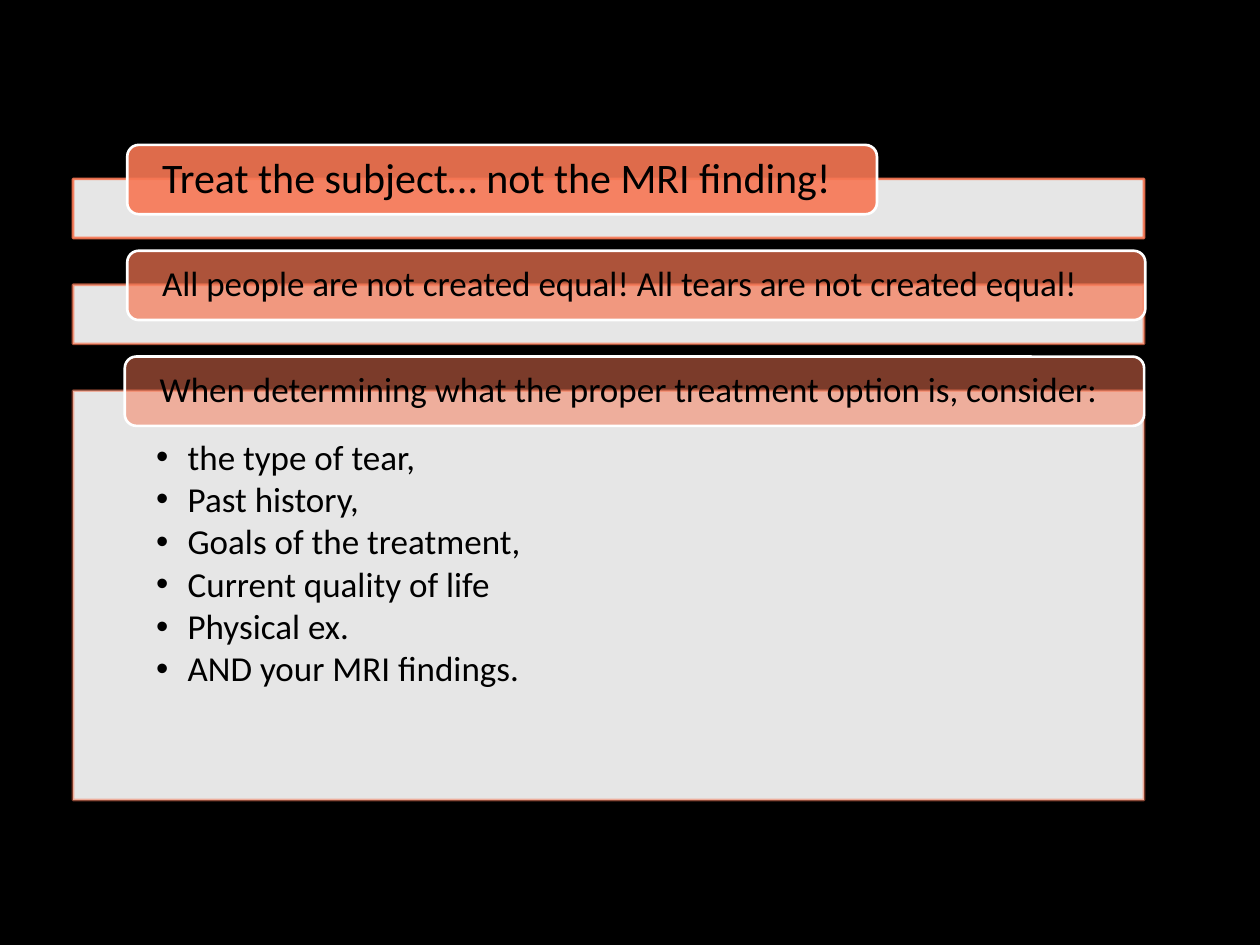
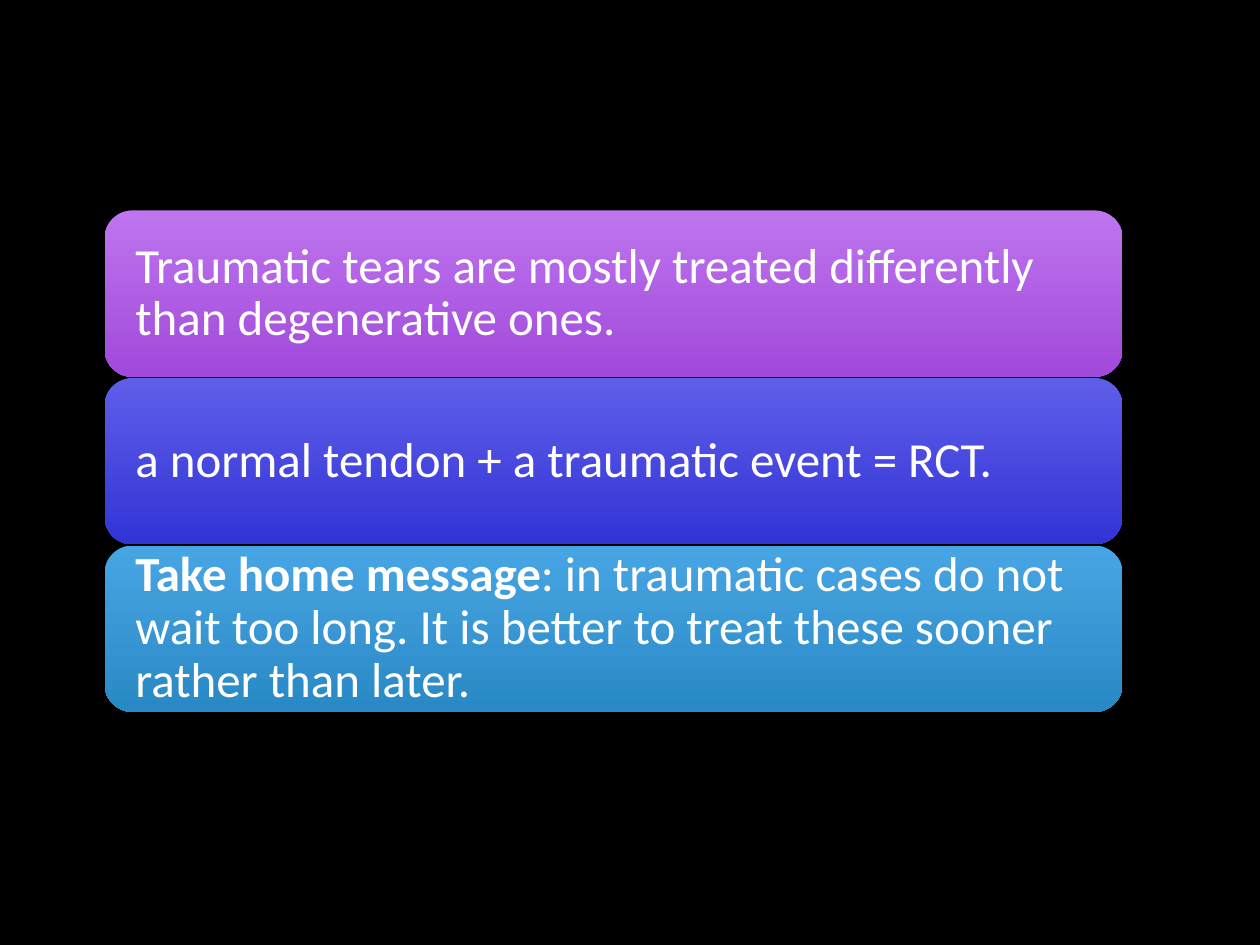
from pptx import Presentation
from pptx.dml.color import RGBColor
from pptx.enum.shapes import MSO_SHAPE as SHAPE
from pptx.enum.text import MSO_ANCHOR as ANCHOR, PP_ALIGN as ALIGN
from pptx.oxml.ns import qn
from pptx.util import Inches, Pt
from lxml import etree

BLACK = RGBColor(0x00, 0x00, 0x00)
WHITE = RGBColor(0xFF, 0xFF, 0xFF)
CORAL = RGBColor(0xF7, 0x77, 0x54)
PURPLES = RGBColor(0xBE, 0x75, 0xEE), RGBColor(0xA1, 0x49, 0xDB)
INDIGOS = RGBColor(0x5E, 0x5E, 0xE9), RGBColor(0x33, 0x34, 0xD6)
BLUES = RGBColor(0x48, 0xA5, 0xE3), RGBColor(0x29, 0x89, 0xC5)


def paint(fill, color, opacity):
    """Fill a shape or line with a colour at the given percentage of opacity."""
    fill.solid()
    fill.fore_color.rgb = color
    if opacity < 100:
        clr = fill._xPr.find(f"{qn('a:solidFill')}/{qn('a:srgbClr')}")
        etree.SubElement(clr, qn("a:alpha"), val=str(opacity * 1000))


def add_box(s, kind, box, paragraphs, size, color, margins, anchor=ANCHOR.MIDDLE,
            after=0, bullet=False):
    """Add a shape whose paragraphs are lists of (text, bold) runs."""
    sp = s.shapes.add_shape(kind, *map(Inches, box))
    sp.shadow.inherit = False
    tf = sp.text_frame
    tf.word_wrap = True
    tf.vertical_anchor = anchor
    for side, margin in zip(("left", "top", "right", "bottom"), margins):
        setattr(tf, f"margin_{side}", Inches(margin))
    for i, runs in enumerate(paragraphs):
        p = tf.add_paragraph() if i else tf.paragraphs[0]
        p.alignment, p.line_spacing, p.space_after = ALIGN.LEFT, 0.9, Pt(after)
        if bullet:
            pPr = p._p.get_or_add_pPr()
            pPr.set("marL", str(Inches(0.25)))
            pPr.set("indent", str(Inches(-0.25)))
            etree.SubElement(pPr, qn("a:buFont"), typeface="Arial")
            etree.SubElement(pPr, qn("a:buChar"), char="•")
        for text, bold in runs:
            r = p.add_run()
            r.text = text
            for name, value in {"name": "Calibri", "size": Pt(size), "bold": bold}.items():
                setattr(r.font, name, value)
            r.font.color.rgb = color
    return sp


prs = Presentation()
prs.slide_width, prs.slide_height = Inches(10), Inches(7.5)
treatment, takeaway = [prs.slides.add_slide(prs.slide_layouts[6]) for _ in range(2)]
for s in (treatment, takeaway):
    s.background.fill.solid()
    s.background.fill.fore_color.rgb = BLACK

# Slide 1: panels, each with a heading overlapping its top edge
considerations = ["the type of tear,", "Past history,", "Goals of the treatment,",
                  "Current quality of life", "Physical ex.", "AND your MRI findings."]
sections = [  # heading, size, left, width, opacity, panel height, bullets
    ("Treat the subject… not the MRI finding!", 24, 1.01, 5.95, 90, 0.47, []),
    ("All people are not created equal! All tears are not created equal!",
     20, 1.01, 8.08, 70, 0.47, []),
    ("When determining what the proper treatment option is, consider:",
     20, 0.99, 8.09, 50, 3.25, considerations),
]
for i, (heading, size, left, width, opacity, height, bullets) in enumerate(sections):
    top = 1.15 + 0.84 * i
    panel = add_box(treatment, SHAPE.RECTANGLE, (0.58, top + 0.27, 8.5, height),
                    [[(text, False)] for text in bullets], 20, BLACK,
                    (0.66, 0.39, 0.66, 0.16), ANCHOR.TOP, after=2.6, bullet=True)
    paint(panel.fill, WHITE, 90)
    paint(panel.line.fill, CORAL, opacity)
    tab = add_box(treatment, SHAPE.ROUNDED_RECTANGLE, (left, top, width, 0.55),
                  [[(heading, False)]], size, BLACK, (0.25, 0, 0.22, 0))
    paint(tab.fill, CORAL, opacity)
    paint(tab.line.fill, WHITE, 100)
    for sp in (panel, tab):
        sp.line.width = Pt(1.5)

# Slide 2: three stacked gradient cards
cards = [
    (PURPLES, [("Traumatic tears are mostly treated differently than degenerative ones.", False)]),
    (INDIGOS, [("a normal tendon + a traumatic event = RCT.", False)]),
    (BLUES, [("Take home message", True),
             (": in traumatic cases do not wait too long. It is better to treat "
              "these sooner rather than later.", False)]),
]
for i, (colors, runs) in enumerate(cards):
    card = add_box(takeaway, SHAPE.ROUNDED_RECTANGLE, (0.83, 1.67 + 1.33 * i, 8.08, 1.32),
                   [runs], 28, WHITE, (0.18,) * 4)
    card.line.fill.background()
    card.fill.gradient()
    card.fill.gradient_angle = 270
    for stop, position, color in zip(card.fill.gradient_stops, (0, 1), colors):
        stop.position = position
        stop.color.rgb = color

prs.save("out.pptx")
